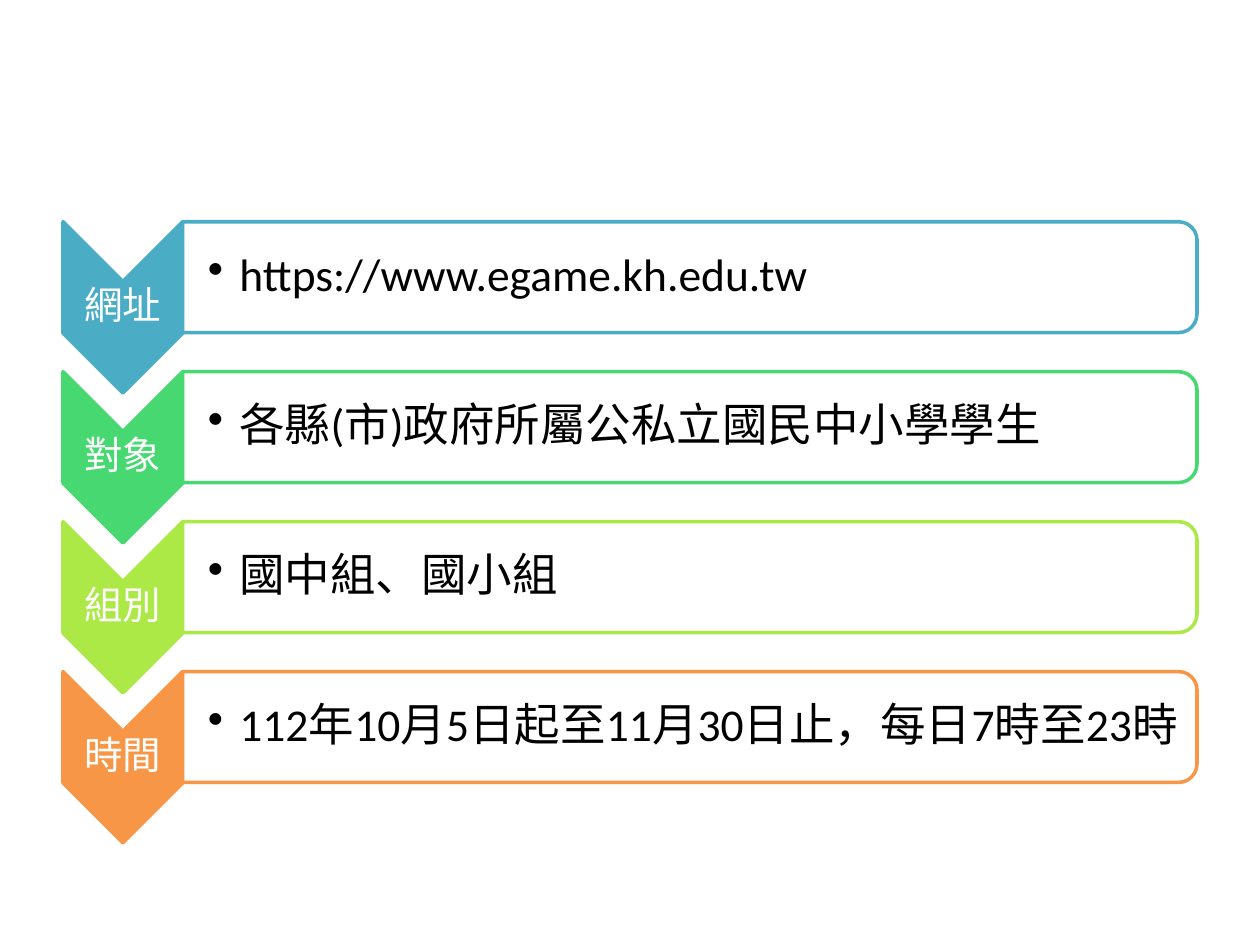
import pptx
import pptx.util
import pptx.dml.color
import pptx.enum.shapes
import pptx.enum.text
import pptx.oxml.ns
from dataclasses import dataclass
from lxml import etree

Inches = pptx.util.Inches
Pt = pptx.util.Pt
RGB = pptx.dml.color.RGBColor.from_string
PRESET = pptx.enum.shapes.MSO_SHAPE
ALIGN = pptx.enum.text.PP_ALIGN
qn = pptx.oxml.ns.qn


@dataclass(frozen=True)
class Theme:
    font: str = "Calibri"
    label_size: int = 22
    detail_size: int = 26
    label_color: str = "FFFFFF"
    detail_color: str = "000000"
    panel_fill: str = "FFFFFF"
    panel_opacity: int = 90
    line_width: int = 2


THEME = Theme()

# Row grid, in inches
FIRST_TOP, ROW_PITCH = 1.76, 1.19
CHEVRON_LEFT, CHEVRON_WIDTH, CHEVRON_HEIGHT = 0.5, 0.95, 1.36
PANEL_LEFT = CHEVRON_LEFT + CHEVRON_WIDTH
PANEL_WIDTH, PANEL_HEIGHT = 8.05, 0.88

ROWS = [
    ("網址", "https://www.egame.kh.edu.tw", "4BACC6"),
    ("對象", "各縣(市)政府所屬公私立國民中小學學生", "47D872"),
    ("組別", "國中組、國小組", "ACE946"),
    ("時間", "112年10月5日起至11月30日止，每日7時至23時", "F79646"),
]


def add_turned_shape(diagram, preset, left, top, width, height, fill, line):
    """Add a shape turned by 90 degrees that covers the given visible box."""
    shift = (width - height) / 2
    shape = diagram.shapes.add_shape(
        preset, Inches(left + shift), Inches(top - shift),
        Inches(height), Inches(width))
    shape.rotation = 90
    shape.shadow.inherit = False
    shape.fill.solid()
    shape.fill.fore_color.rgb = RGB(fill)
    shape.line.color.rgb = RGB(line)
    shape.line.width = Pt(THEME.line_width)
    return shape


def set_opacity(shape, percent):
    color = shape.fill._xPr.find(qn("a:solidFill"))[0]
    etree.SubElement(color, qn("a:alpha"), val=str(percent * 1000))


def add_text(diagram, text, left, top, width, height, size, color, inset=0.02):
    """Add a one-paragraph, vertically centred box and return its paragraph."""
    box = diagram.shapes.add_textbox(
        Inches(left), Inches(top), Inches(width), Inches(height))
    frame = box.text_frame
    frame.word_wrap = True
    frame.vertical_anchor = pptx.enum.text.MSO_ANCHOR.MIDDLE
    frame.margin_left = Inches(inset)
    frame.margin_top = frame.margin_right = frame.margin_bottom = Inches(0.02)
    paragraph = frame.paragraphs[0]
    paragraph.line_spacing = 0.9
    run = paragraph.add_run()
    run.text = text
    run.font.name = THEME.font
    run.font.size = Pt(size)
    run.font.color.rgb = RGB(color)
    return paragraph


def add_bullet(paragraph, indent=0.25):
    properties = paragraph._p.get_or_add_pPr()
    properties.set("marL", str(Inches(indent)))
    properties.set("indent", str(-Inches(indent)))
    etree.SubElement(properties, qn("a:buChar"), char="•")


def add_row(diagram, top, label, detail, accent):
    # Chevron with its label
    add_turned_shape(diagram, PRESET.CHEVRON, CHEVRON_LEFT, top,
                     CHEVRON_WIDTH, CHEVRON_HEIGHT, accent, accent)
    heading = add_text(diagram, label, CHEVRON_LEFT, top + 0.47, CHEVRON_WIDTH,
                       0.41, THEME.label_size, THEME.label_color)
    heading.alignment = ALIGN.CENTER

    # Panel with its bulleted detail
    panel = add_turned_shape(diagram, PRESET.ROUND_2_SAME_RECTANGLE, PANEL_LEFT,
                             top, PANEL_WIDTH, PANEL_HEIGHT,
                             THEME.panel_fill, accent)
    set_opacity(panel, THEME.panel_opacity)
    item = add_text(diagram, detail, PANEL_LEFT, top + 0.04, PANEL_WIDTH - 0.04,
                    PANEL_HEIGHT - 0.08, THEME.detail_size, THEME.detail_color,
                    inset=0.2)
    item.level = 1
    add_bullet(item)


def main():
    deck = pptx.Presentation()
    deck.slide_width, deck.slide_height = Inches(10), Inches(7.5)
    slide = deck.slides.add_slide(deck.slide_layouts[6])

    # Chevron list
    diagram = slide.shapes.add_group_shape()
    for index, (label, detail, accent) in enumerate(ROWS):
        add_row(diagram, FIRST_TOP + index * ROW_PITCH, label, detail, accent)

    deck.save("out.pptx")


if __name__ == "__main__":
    main()
